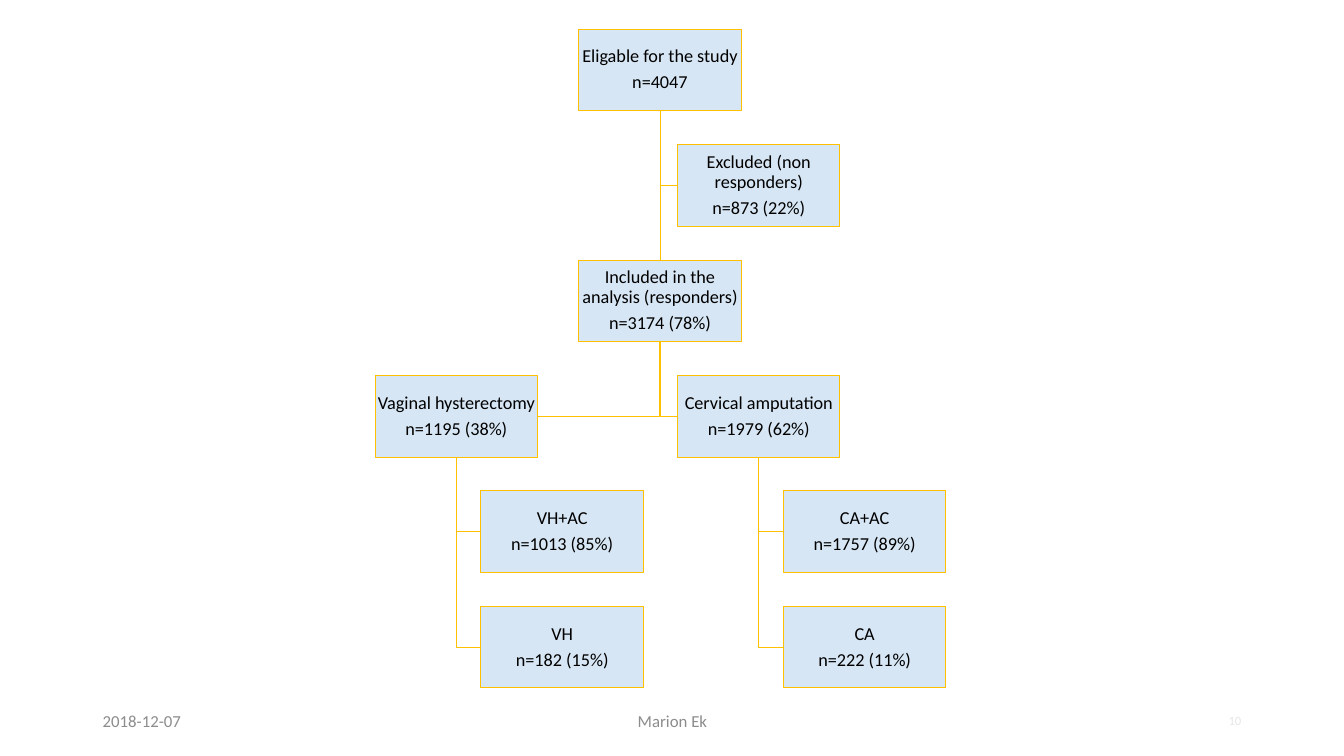
from pptx import Presentation
from pptx.dml.color import RGBColor
from pptx.enum.shapes import MSO_CONNECTOR, MSO_SHAPE
from pptx.enum.text import MSO_ANCHOR, PP_ALIGN
from pptx.oxml.ns import qn
from pptx.util import Inches, Pt
from lxml import etree

RECTANGLE = MSO_SHAPE.RECTANGLE
STRAIGHT = MSO_CONNECTOR.STRAIGHT
MIDDLE = MSO_ANCHOR.MIDDLE
LEFT, CENTER, RIGHT = PP_ALIGN.LEFT, PP_ALIGN.CENTER, PP_ALIGN.RIGHT
BOTTOM_SIDE, TOP_SIDE = 2, 0

COLORS = {
    "box": "D7E6F4",
    "line": "FFC000",
    "text": "000000",
    "footer": "8C8C8C",
    "number": "E7E6E6",
}
FONT = "Calibri"

# Grid of the flow chart, in inches
BOX_WIDTH, BOX_HEIGHT = 1.61, 0.81
FIRST_ROW, ROW_PITCH = 0.29, 1.145
COLUMNS = {"left": 3.72, "left child": 4.77, "trunk": 5.74,
           "right": 6.72, "right child": 7.77}

# Name: (column, row, label, count)
BOXES = {
    "eligible": ("trunk", 0, "Eligable for the study", "n=4047"),
    "excluded": ("right", 1, "Excluded (non responders)", "n=873 (22%)"),
    "included": ("trunk", 2, "Included in the analysis (responders)", "n=3174 (78%)"),
    "hysterectomy": ("left", 3, "Vaginal hysterectomy", "n=1195 (38%)"),
    "amputation": ("right", 3, "Cervical amputation", "n=1979 (62%)"),
    "VH+AC": ("left child", 4, "VH+AC", "n=1013 (85%)"),
    "VH": ("left child", 5, "VH", "n=182 (15%)"),
    "CA+AC": ("right child", 4, "CA+AC", "n=1757 (89%)"),
    "CA": ("right child", 5, "CA", "n=222 (11%)"),
}

BRANCHES = [
    ("eligible", "excluded"),
    ("included", "hysterectomy"), ("included", "amputation"),
    ("hysterectomy", "VH+AC"), ("hysterectomy", "VH"),
    ("amputation", "CA+AC"), ("amputation", "CA"),
]

# Text, left, width, alignment, size, colour
FOOTERS = [
    ("2018-12-07", 0.92, 3, LEFT, 12, "footer"),
    ("Marion Ek", 4.42, 4.5, CENTER, 12, "footer"),
    ("10", 9.41, 3, RIGHT, 9, "number"),
]


def color(name):
    return RGBColor.from_string(COLORS[name])


def format_paragraph(paragraph, alignment, size, color_name):
    paragraph.alignment = alignment
    for run in paragraph.runs:
        run.font.name = FONT
        run.font.size = Pt(size)
        run.font.color.rgb = color(color_name)


def style_line(shape, width):
    shape.line.color.rgb = color("line")
    shape.line.width = Pt(width)


def add_box(slide, column, row, label, count):
    shape = slide.shapes.add_shape(
        RECTANGLE, Inches(COLUMNS[column]), Inches(FIRST_ROW + row * ROW_PITCH),
        Inches(BOX_WIDTH), Inches(BOX_HEIGHT))
    shape.shadow.inherit = False
    shape.fill.solid()
    shape.fill.fore_color.rgb = color("box")
    style_line(shape, 0.75)
    frame = shape.text_frame
    frame.word_wrap = True
    frame.vertical_anchor = MIDDLE
    frame.margin_left = frame.margin_right = Inches(0.01)
    frame.margin_top = frame.margin_bottom = Inches(0.01)
    frame.text = f"{label}\n{count}"
    for paragraph in frame.paragraphs:
        format_paragraph(paragraph, CENTER, 13, "text")
        paragraph.line_spacing = 0.9
        paragraph.space_after = Pt(4.5)
    return shape


def add_trunk(slide, parent, child):
    connector = slide.shapes.add_connector(STRAIGHT, 0, 0, 0, 0)
    connector.begin_connect(parent, BOTTOM_SIDE)
    connector.end_connect(child, TOP_SIDE)
    style_line(connector, 0.5)
    etree.SubElement(connector._element.spPr, qn("a:effectLst"))


def add_branch(slide, parent, child):
    """Go down from the parent's middle, then across to the child's near side."""
    start_x = parent.left + parent.width // 2
    start_y = parent.top + parent.height
    end_x = child.left if child.left > start_x else child.left + child.width
    end_y = child.top + child.height // 2
    builder = slide.shapes.build_freeform(start_x, start_y)
    builder.add_line_segments([(start_x, end_y), (end_x, end_y)], close=False)
    shape = builder.convert_to_shape()
    shape.shadow.inherit = False
    shape.fill.background()
    style_line(shape, 0.5)


def add_footer(slide, text, left, width, alignment, size, color_name):
    shape = slide.shapes.add_textbox(
        Inches(left), Inches(6.95), Inches(width), Inches(0.4))
    frame = shape.text_frame
    frame.word_wrap = True
    frame.vertical_anchor = MIDDLE
    frame.text = text
    format_paragraph(frame.paragraphs[0], alignment, size, color_name)


def main():
    presentation = Presentation()
    presentation.slide_width = Inches(13.33)
    presentation.slide_height = Inches(7.5)
    slide = presentation.slides.add_slide(presentation.slide_layouts[6])

    # Footer line
    for footer in FOOTERS:
        add_footer(slide, *footer)

    # Flow chart
    boxes = {name: add_box(slide, *content) for name, content in BOXES.items()}
    add_trunk(slide, boxes["eligible"], boxes["included"])
    for parent, child in BRANCHES:
        add_branch(slide, boxes[parent], boxes[child])

    presentation.save("out.pptx")


if __name__ == "__main__":
    main()
